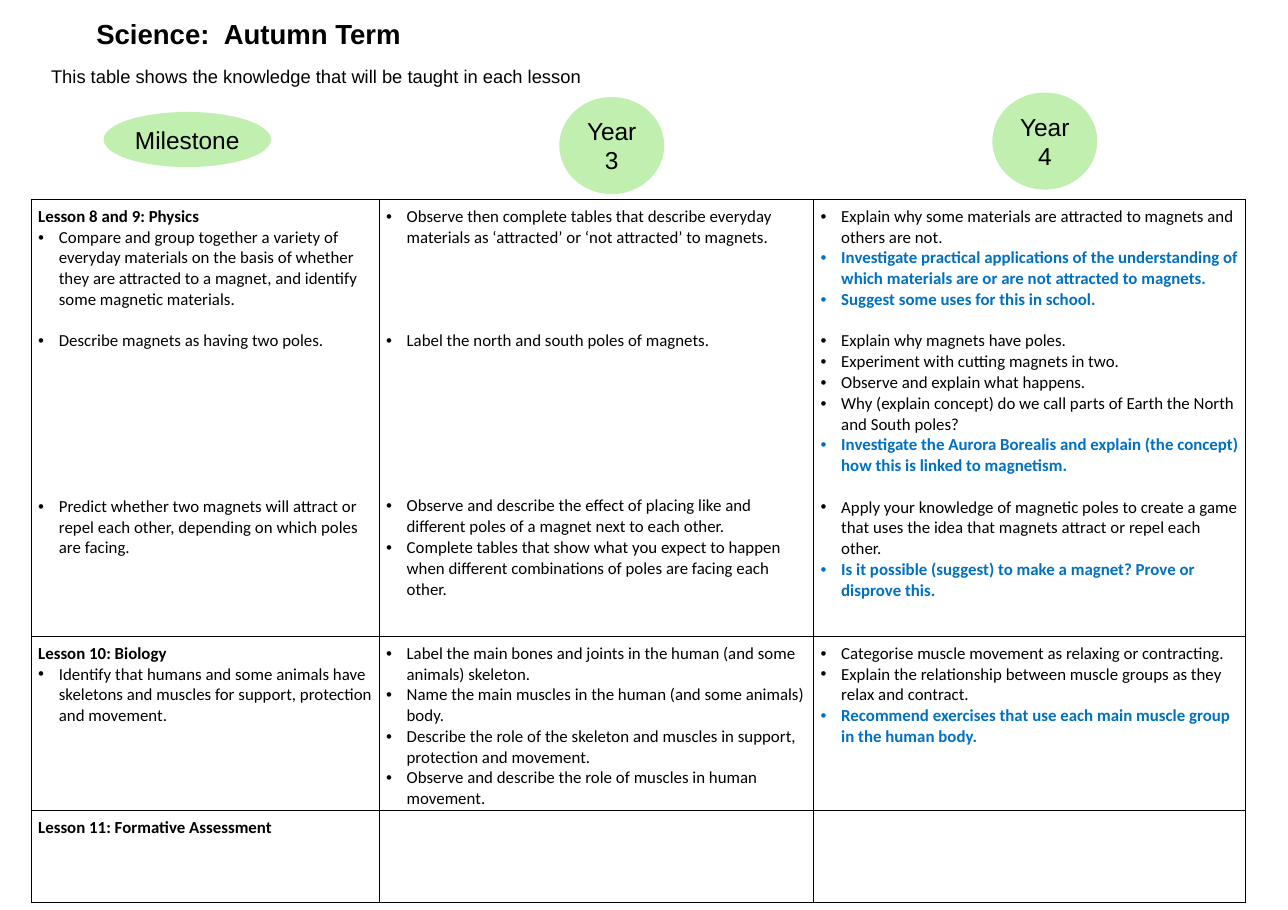
from lxml import etree
from pptx import Presentation
from pptx.dml.color import RGBColor
from pptx.enum import shapes, text
from pptx.oxml import ns
from pptx.util import Pt

BLACK, WHITE, BLUE, GREEN = "000000", "FFFFFF", "0070C0", "C0EFAF"
LINE = 13.5  # height of one line of table text
WIDTHS = (227.3, 284, 282.2)
HEIGHTS = (285.5, 113.7, 60.4)


def head(words):
    return words, {"bold": True}


def item(words, gap=0):
    """A bulleted line, set below the given number of free lines."""
    return words, {"bullet": True, "gap": gap * LINE}


def task(words):
    """A bulleted extension task in bold blue."""
    return words, {"bullet": True, "bold": True, "color": BLUE}


LESSONS = [
    [
        [
            head("Lesson 8 and 9: Physics"),
            item("Compare and group together a variety of everyday materials on the basis of "
                 "whether they are attracted to a magnet, and identify some magnetic materials."),
            item("Describe magnets as having two poles.", gap=1),
            item("Predict whether two magnets will attract or repel each other, depending on "
                 "which poles are facing.", gap=7),
        ],
        [
            item("Observe then complete tables that describe everyday materials as "
                 "‘attracted’ or ‘not attracted’ to magnets."),
            item("Label the north and south poles of magnets.", gap=4),
            item("Observe and describe the effect of placing like and different poles of a "
                 "magnet next to each other.", gap=7),
            item("Complete tables that show what you expect to happen when different "
                 "combinations of poles are facing each other."),
        ],
        [
            item("Explain why some materials are attracted to magnets and others are not."),
            task("Investigate practical applications of the understanding of which materials "
                 "are or are not attracted to magnets."),
            task("Suggest some uses for this in school."),
            item("Explain why magnets have poles.", gap=1),
            item("Experiment with cutting magnets in two."),
            item("Observe and explain what happens."),
            item("Why (explain concept) do we call parts of Earth the North and South poles?"),
            task("Investigate the Aurora Borealis and explain (the concept) how this is linked "
                 "to magnetism."),
            item("Apply your knowledge of magnetic poles to create a game that uses the idea "
                 "that magnets attract or repel each other.", gap=1),
            task("Is it possible (suggest) to make a magnet? Prove or disprove this."),
        ],
    ],
    [
        [
            head("Lesson 10: Biology"),
            item("Identify that humans and some animals have skeletons and muscles for support, "
                 "protection and movement."),
        ],
        [
            item("Label the main bones and joints in the human (and some animals) skeleton."),
            item("Name the main muscles in the human (and some animals) body."),
            item("Describe the role of the skeleton and muscles in support, protection and "
                 "movement."),
            item("Observe and describe the role of muscles in human movement."),
        ],
        [
            item("Categorise muscle movement as relaxing or contracting."),
            item("Explain the relationship between muscle groups as they relax and contract."),
            task("Recommend exercises that use each main muscle group in the human body."),
        ],
    ],
    [[head("Lesson 11: Formative Assessment")], [], []],
]


def rgb(code):
    return RGBColor.from_string(code)


def write(para, words, font="Arial", size=12, color=BLACK, bold=False,
          align=text.PP_ALIGN.LEFT, gap=0, bullet=False):
    para.alignment = align
    para.space_before = Pt(gap)
    run = para.add_run()
    run.text = words
    run.font.name, run.font.size, run.font.bold = font, Pt(size), bold
    run.font.color.rgb = rgb(color)
    if bullet:
        props = para._p.get_or_add_pPr()
        props.set("marL", str(Pt(LINE)))
        props.set("indent", str(-Pt(LINE)))
        etree.SubElement(props, ns.qn("a:buFont")).set("typeface", "Arial")
        etree.SubElement(props, ns.qn("a:buChar")).set("char", "•")


def place(shape, left, top, width, height):
    shape.left, shape.top = Pt(left), Pt(top)
    shape.width, shape.height = Pt(width), Pt(height)


def label(shape, words, wrap=True, **style):
    frame = shape.text_frame
    frame.word_wrap = wrap
    frame.auto_size = text.MSO_AUTO_SIZE.NONE
    frame.vertical_anchor = text.MSO_ANCHOR.MIDDLE
    frame.margin_left = frame.margin_right = Pt(3)
    frame.margin_top = frame.margin_bottom = Pt(3)
    write(frame.paragraphs[0], words, **style)


def badge(slide, words, left, top, width, height):
    """A green oval that heads a column."""
    oval = slide.shapes.add_shape(shapes.MSO_SHAPE.OVAL, Pt(left), Pt(top), Pt(width), Pt(height))
    oval.shadow.inherit = False
    oval.fill.solid()
    oval.fill.fore_color.rgb = rgb(GREEN)
    oval.line.fill.background()
    label(oval, words, size=16, align=text.PP_ALIGN.CENTER)


def border(cell):
    props = cell._tc.get_or_add_tcPr()
    for side in ("a:lnL", "a:lnR", "a:lnT", "a:lnB"):
        edge = etree.SubElement(props, ns.qn(side), w=str(Pt(1)))
        fill = etree.SubElement(edge, ns.qn("a:solidFill"))
        etree.SubElement(fill, ns.qn("a:srgbClr"), val=BLACK)


def fill_cell(cell, lines):
    border(cell)
    cell.fill.solid()
    cell.fill.fore_color.rgb = rgb(WHITE)
    cell.margin_left = cell.margin_right = cell.margin_top = Pt(4.5)
    cell.margin_bottom = 0
    frame = cell.text_frame
    for i, (words, style) in enumerate(lines):
        para = frame.add_paragraph() if i else frame.paragraphs[0]
        write(para, words, font="Calibri", size=11, **style)


def add_plan(slide, left, top):
    """The table of lessons."""
    frame = slide.shapes.add_table(len(HEIGHTS), len(WIDTHS), Pt(left), Pt(top),
                                   Pt(sum(WIDTHS)), Pt(sum(HEIGHTS)))
    table = frame.table
    table.first_row = table.horz_banding = False
    for col, width in zip(table.columns, WIDTHS):
        col.width = Pt(width)
    for row, height, cells in zip(table.rows, HEIGHTS, LESSONS):
        row.height = Pt(height)
        for cell, lines in zip(row.cells, cells):
            fill_cell(cell, lines)


def main():
    deck = Presentation()
    deck.slide_width, deck.slide_height = Pt(841.7), Pt(594.7)
    slide = deck.slides.add_slide(deck.slide_layouts[5])

    title = slide.shapes.title
    place(title, 57.7, 8, 209.5, 28)
    label(title, "Science:  Autumn Term", wrap=False, size=18, bold=True,
          align=text.PP_ALIGN.CENTER)
    intro = slide.shapes.add_textbox(Pt(30.4), Pt(39.8), Pt(751), Pt(20))
    label(intro, "This table shows the knowledge that will be taught in each lesson")

    add_plan(slide, 20.5, 130.3)
    badge(slide, "Year 4", 648.5, 60.5, 68.5, 63.4)
    badge(slide, "Year 3", 365.5, 63.4, 68.5, 63.4)
    badge(slide, "Milestone", 67.7, 73.2, 109.4, 36)
    deck.save("out.pptx")


if __name__ == "__main__":
    main()
